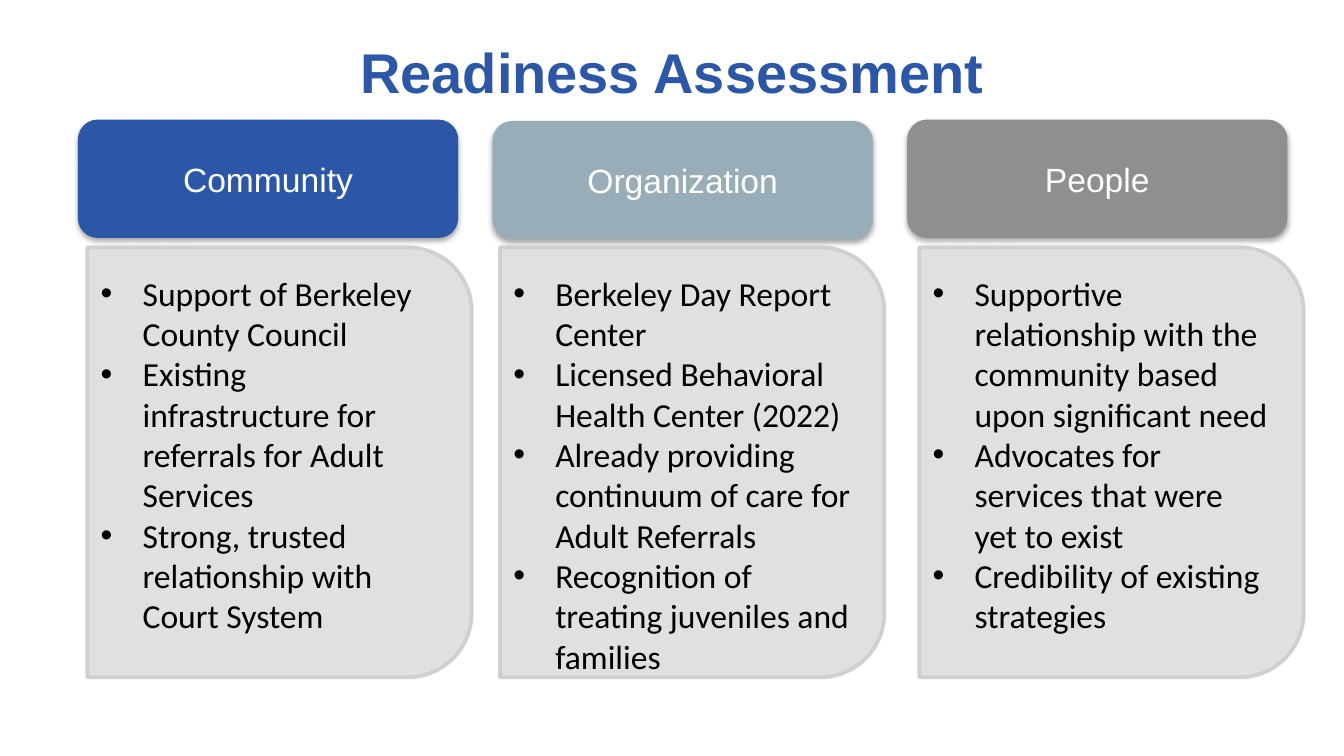
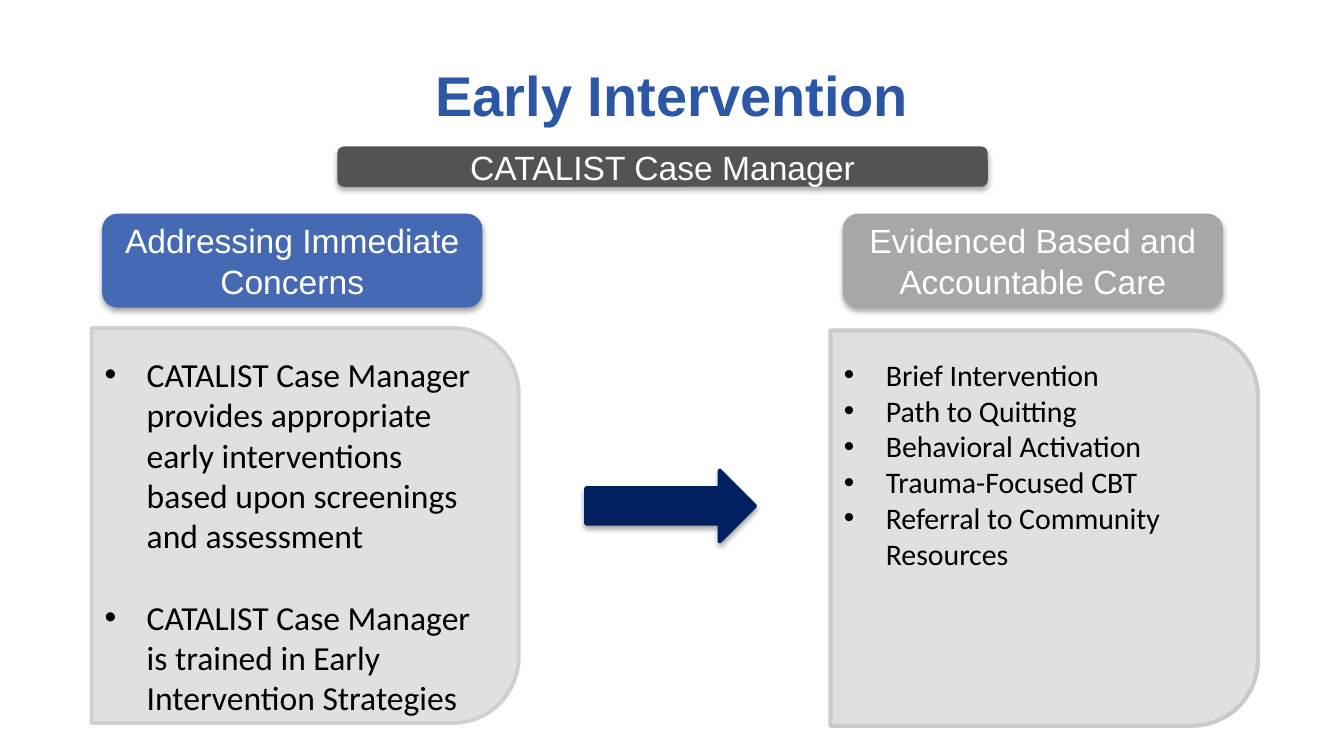
from lxml.etree import SubElement
from pptx import Presentation
from pptx.dml.color import RGBColor
from pptx.enum.shapes import MSO_SHAPE
from pptx.enum.text import MSO_ANCHOR, PP_ALIGN
from pptx.oxml.ns import qn
from pptx.util import Inches, Pt

COLORS = {
    "title": "2C57A7",
    "community": "2C57A7",
    "organization": "99ADB9",
    "people": "8F8F8F",
    "concerns": "4569B2",
    "care": "A7A7A7",
    "manager": "535353",
    "arrow": "002060",
    "panel": "DDDDDD",
    "panel_line": "CDCCD0",
    "care_line": "CACACA",
    "white": "FFFFFF",
    "black": "000000",
}

READINESS = [
    {
        "heading": "Community", "color": "community", "header_top": 0.89, "panel_left": 0.65,
        "points": [
            "Support of Berkeley County Council",
            "Existing infrastructure for referrals for Adult Services",
            "Strong, trusted relationship with Court System",
        ],
    },
    {
        "heading": "Organization", "color": "organization", "header_top": 0.9, "panel_left": 3.72,
        "points": [
            "Berkeley Day Report Center",
            "Licensed Behavioral Health Center (2022)",
            "Already providing continuum of care for Adult Referrals",
            "Recognition of treating juveniles and families",
        ],
    },
    {
        "heading": "People", "color": "people", "header_top": 0.89, "panel_left": 6.84,
        "points": [
            "Supportive relationship with the community based upon significant need",
            "Advocates for services that were yet to exist",
            "Credibility of existing strategies",
        ],
    },
]

INTERVENTION = [
    {
        "heading": "Addressing Immediate Concerns", "color": "concerns", "header_left": 0.76,
        "panel": (0.68, 2.44, 3.18, 2.94),
        "style": {"size": 18, "gap": 22},
        "points": [
            "CATALIST Case Manager provides appropriate early interventions "
            "based upon screenings and assessment",
            "CATALIST Case Manager is trained in Early Intervention Strategies",
        ],
    },
    {
        "heading": "Evidenced Based and Accountable Care", "color": "care", "header_left": 6.27,
        "panel": (6.18, 2.46, 3.18, 2.94),
        "style": {"size": 16, "line": "care_line", "line_width": 2.25, "line_alpha": 100},
        "points": [
            "Brief Intervention",
            "Path to Quitting",
            "Behavioral Activation",
            "Trauma-Focused CBT",
            "Referral to Community Resources",
        ],
    },
]

HEADER_LEFT, HEADER_RIGHT, HEADER_WIDTH = 0.58, 6.75, 2.83
BULLET_INDENT = Pt(22.5)


def rgb(name):
    return RGBColor.from_string(COLORS[name])


def add_text(para, text, font, size, color, bold=False):
    span = para.add_run()
    span.text = text
    span.font.name = font
    span.font.size = Pt(size)
    span.font.bold = bold
    span.font.color.rgb = rgb(color)


def add_title(page, text, top):
    box = page.shapes.add_textbox(Inches(0), Inches(top), Inches(10), Inches(0.88))
    frame = box.text_frame
    frame.word_wrap = True
    frame.vertical_anchor = MSO_ANCHOR.MIDDLE
    para = frame.paragraphs[0]
    para.alignment = PP_ALIGN.CENTER
    para.line_spacing = 0.9
    add_text(para, text, "Arial", 30, "title", bold=True)


def add_filled(page, kind, area, color):
    shape = page.shapes.add_shape(kind, *map(Inches, area))
    shape.shadow.inherit = False
    shape.fill.solid()
    shape.fill.fore_color.rgb = rgb(color)
    shape.line.fill.background()
    return shape


def set_line(shape, color, width):
    shape.line.color.rgb = rgb(color)
    shape.line.width = Pt(width)


def set_alpha(color_node, percent):
    SubElement(color_node, qn("a:alpha"), val=str(percent * 1000))


def add_shadow(shape):
    effects = shape._element.spPr.find(qn("a:effectLst"))
    shadow = SubElement(effects, qn("a:outerShdw"), blurRad=str(Pt(3)),
                        dist=str(Pt(1.8)), dir="5400000", rotWithShape="0")
    set_alpha(SubElement(shadow, qn("a:srgbClr"), val=COLORS["black"]), 35)


def add_header(page, text, area, color):
    shape = add_filled(page, MSO_SHAPE.ROUNDED_RECTANGLE, area, color)
    add_shadow(shape)
    frame = shape.text_frame
    frame.word_wrap = True
    frame.vertical_anchor = MSO_ANCHOR.MIDDLE
    frame.margin_left = frame.margin_right = Inches(0.05)
    frame.margin_top = frame.margin_bottom = Inches(0.05)
    para = frame.paragraphs[0]
    para.alignment = PP_ALIGN.CENTER
    add_text(para, text, "Arial", 18, "white")


def add_panel(page, points, area, size=18, gap=0,
              line="panel_line", line_width=2, line_alpha=90):
    left, top, width, height = area
    shift = (width - height) / 2
    turned = (left + shift, top - shift, height, width)
    shape = add_filled(page, MSO_SHAPE.ROUND_2_SAME_RECTANGLE, turned, "panel")
    shape.rotation = 90
    set_line(shape, line, line_width)
    properties = shape._element.spPr
    set_alpha(properties.find(qn("a:solidFill"))[0], 90)
    set_alpha(properties.find(qn("a:ln")).find(qn("a:solidFill"))[0], line_alpha)

    frame = shape.text_frame
    frame.word_wrap = True
    frame.vertical_anchor = MSO_ANCHOR.TOP
    frame._txBody.bodyPr.set("vert", "vert270")
    for index, point in enumerate(points):
        para = frame.add_paragraph() if index else frame.paragraphs[0]
        para.alignment = PP_ALIGN.LEFT
        if index and gap:
            para.space_before = Pt(gap)
        settings = para._p.get_or_add_pPr()
        settings.set("marL", str(BULLET_INDENT))
        settings.set("indent", str(-BULLET_INDENT))
        SubElement(settings, qn("a:buFont"), typeface="Arial")
        SubElement(settings, qn("a:buChar"), char="•")
        add_text(para, point, "Calibri", size, "black")


def build_readiness(page):
    add_title(page, "Readiness Assessment", 0.12)
    step = (HEADER_RIGHT - HEADER_LEFT) / (len(READINESS) - 1)
    for index, column in enumerate(READINESS):
        left = HEADER_LEFT + index * step
        add_header(page, column["heading"],
                   (left, column["header_top"], HEADER_WIDTH, 0.88), column["color"])
        add_panel(page, column["points"], (column["panel_left"], 1.84, 2.86, 3.2))


def build_intervention(page):
    add_title(page, "Early Intervention", 0.29)
    for column in INTERVENTION:
        add_header(page, column["heading"],
                   (column["header_left"], 1.59, HEADER_WIDTH, 0.7), column["color"])
        add_panel(page, column["points"], column["panel"], **column["style"])
    arrow = add_filled(page, MSO_SHAPE.RIGHT_ARROW, (4.36, 3.5, 1.26, 0.53), "arrow")
    set_line(arrow, "arrow", 2)
    add_shadow(arrow)
    add_header(page, "CATALIST Case Manager", (2.51, 1.09, 4.84, 0.3), "manager")


def main():
    deck = Presentation()
    deck.slide_width = Inches(10)
    deck.slide_height = deck.slide_width * 9 // 16
    for build in (build_readiness, build_intervention):
        build(deck.slides.add_slide(deck.slide_layouts[6]))
    deck.save("out.pptx")


if __name__ == "__main__":
    main()
